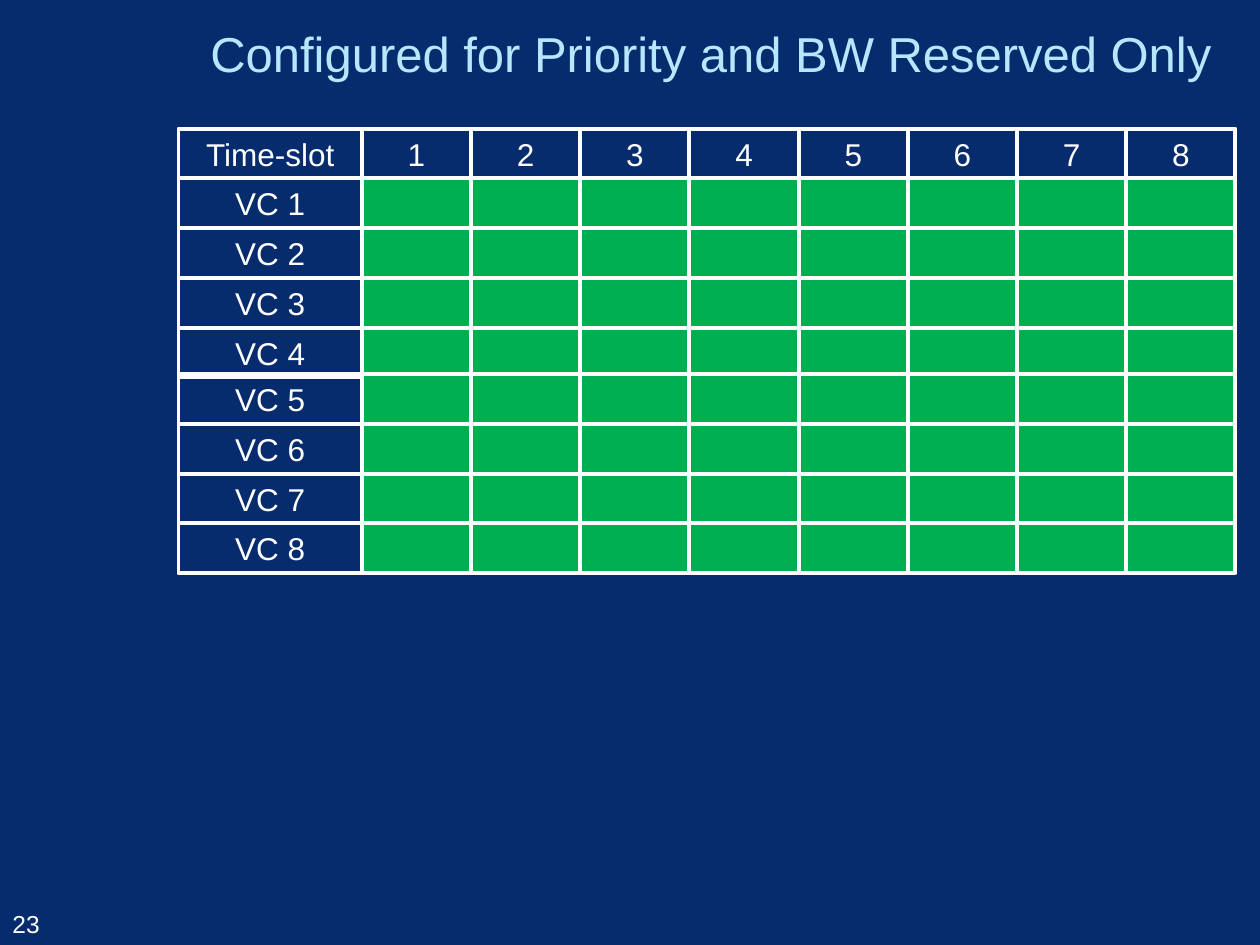
from pptx import Presentation
from pptx.dml.color import RGBColor
from pptx.enum.shapes import MSO_SHAPE
from pptx.enum.text import MSO_ANCHOR, MSO_AUTO_SIZE, PP_ALIGN
from pptx.util import Pt

RECTANGLE = MSO_SHAPE.RECTANGLE
MIDDLE, BOTTOM = MSO_ANCHOR.MIDDLE, MSO_ANCHOR.BOTTOM
LEFT, CENTER = PP_ALIGN.LEFT, PP_ALIGN.CENTER
NO_AUTOFIT = MSO_AUTO_SIZE.NONE

NAVY, WHITE, PALE_BLUE, GREEN = "072C6D", "FFFFFF", "B7E7FF", "00B050"
FONT = "Arial"

# Grid measures in points
SLOTS = 8
LABEL_LEFT, LABEL_WIDTH = 102, 104.8
SLOT_LEFT, SLOT_WIDTH = 206.8, 62.4
ROW_HEIGHT = 28.4
UPPER_TOP, LOWER_TOP = 73.6, 213.9
UPPER_ROWS = 5  # header and VC 1 to VC 4


def color(value):
    return RGBColor.from_string(value)


def write(shape, text, size, text_color, align, anchor):
    frame = shape.text_frame
    frame.word_wrap = True
    frame.auto_size = NO_AUTOFIT
    frame.vertical_anchor = anchor
    para = frame.paragraphs[0]
    para.alignment = align
    span = para.add_run()
    span.text = text
    span.font.name = FONT
    span.font.size = Pt(size)
    span.font.color.rgb = color(text_color)


def add_title(page, text):
    title = page.shapes.title
    title.left, title.top = Pt(113), Pt(0)
    title.width, title.height = Pt(607), Pt(60.5)
    write(title, text, 28, PALE_BLUE, LEFT, MIDDLE)


def add_page_number(page, text):
    box = page.shapes.add_textbox(Pt(0), Pt(502.5), Pt(76.5), Pt(37.5))
    write(box, text, 14, WHITE, LEFT, BOTTOM)


def add_cell(page, left, top, width, text="", fill=None):
    cell = page.shapes.add_shape(
        RECTANGLE, Pt(left), Pt(top), Pt(width), Pt(ROW_HEIGHT))
    cell.shadow.inherit = False
    cell.line.color.rgb = color(WHITE)
    cell.line.width = Pt(2.25)
    if fill:
        cell.fill.solid()
        cell.fill.fore_color.rgb = color(fill)
    else:
        cell.fill.background()
    if text:
        write(cell, text, 18, WHITE, CENTER, MIDDLE)


def row_top(row):
    if row < UPPER_ROWS:
        return UPPER_TOP + row * ROW_HEIGHT
    return LOWER_TOP + (row - UPPER_ROWS) * ROW_HEIGHT


def add_row(page, row):
    top = row_top(row)
    is_header = row == 0
    label = "Time-slot" if is_header else f"VC {row}"
    add_cell(page, LABEL_LEFT, top, LABEL_WIDTH, label)
    for slot in range(SLOTS):
        left = SLOT_LEFT + slot * SLOT_WIDTH
        if is_header:
            add_cell(page, left, top, SLOT_WIDTH, str(slot + 1))
        else:
            add_cell(page, left, top, SLOT_WIDTH, fill=GREEN)


def main():
    deck = Presentation()
    deck.slide_width, deck.slide_height = Pt(720), Pt(540)
    page = deck.slides.add_slide(deck.slide_layouts[5])  # title only
    page.background.fill.solid()
    page.background.fill.fore_color.rgb = color(NAVY)

    # Title and page number
    add_title(page, "Configured for Priority and BW Reserved Only")
    add_page_number(page, "23")

    # Header row, then one row per virtual channel
    for row in range(SLOTS + 1):
        add_row(page, row)

    deck.save("out.pptx")


if __name__ == "__main__":
    main()
